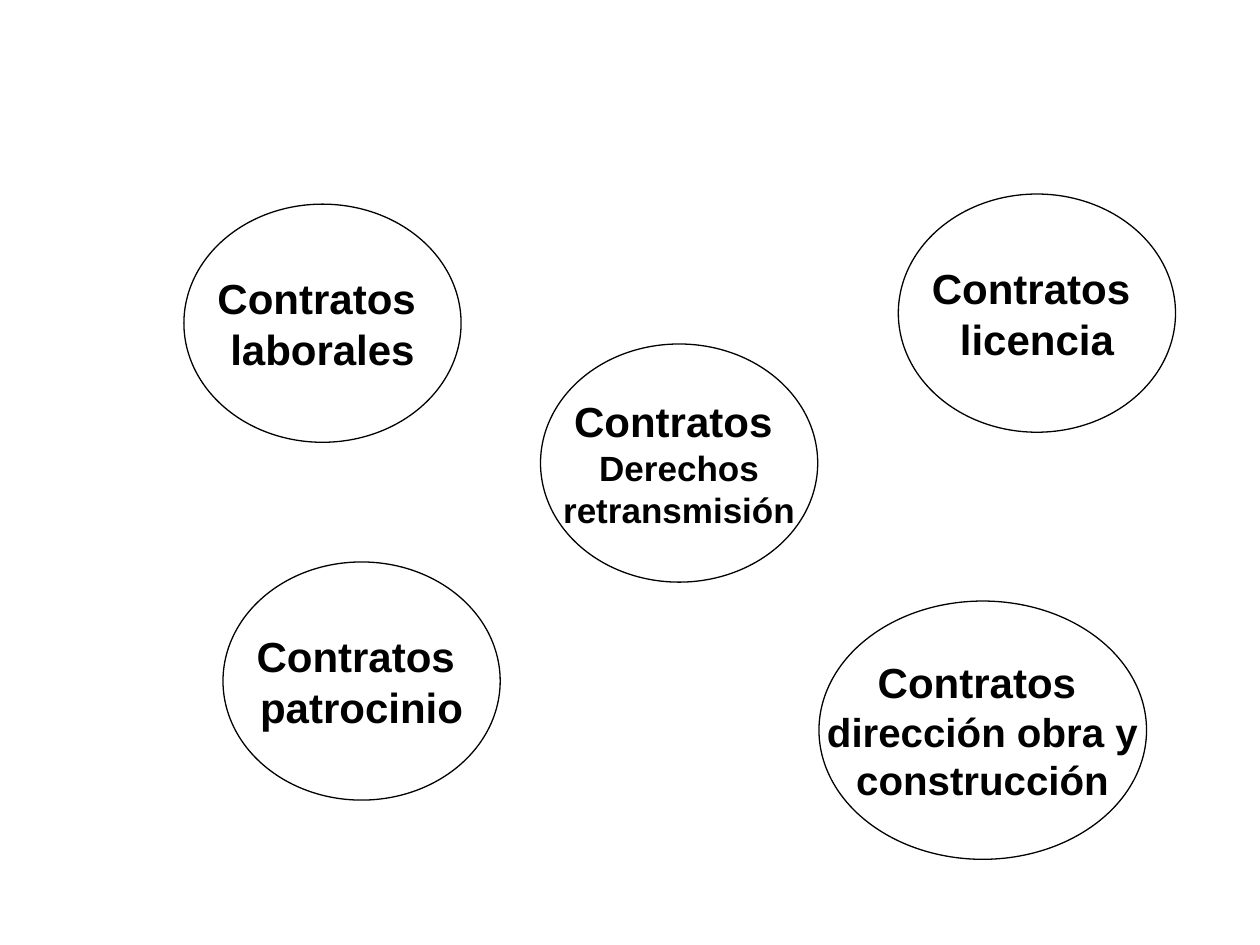
from pptx import Presentation
from pptx.dml.color import RGBColor
from pptx.enum.shapes import MSO_SHAPE
from pptx.enum.text import MSO_ANCHOR, PP_ALIGN
from pptx.util import Inches, Pt

W, H = 10, 7.5
OVAL = (2.2 / W, 1.89 / H)
WIDE_OVAL = (2.6 / W, 2.05 / H)
HEADING = "Contratos "
HEADING_SIZE = 24

# Left and top as shares of the slide, oval size, lines below the heading, their size
CONTRACTS = [
    (1.77 / W, 4.46 / H, OVAL, ["patrocinio"], 24),
    (1.46 / W, 1.62 / H, OVAL, ["laborales"], 24),
    (4.29 / W, 2.73 / H, OVAL, ["Derechos", "retransmisión"], 20),
    (7.13 / W, 1.54 / H, OVAL, ["licencia"], 24),
    (6.5 / W, 4.77 / H, WIDE_OVAL, ["dirección obra y", "construcción"], 23),
]


def color(value):
    return RGBColor.from_string(value)


def add_line(p, text, size):
    p.alignment = PP_ALIGN.CENTER
    r = p.add_run()
    r.text = text
    for name, value in {"name": "Arial", "size": Pt(size), "bold": True}.items():
        setattr(r.font, name, value)
    r.font.color.rgb = color("000000")


def add_contract(s, box, lines, size):
    """Place one outlined oval with a heading and its lines in the given box."""
    left, top, width, height = box
    sp = s.shapes.add_shape(MSO_SHAPE.OVAL, Inches(left * W), Inches(top * H),
                            Inches(width * W), Inches(height * H))
    sp.shadow.inherit = False
    sp.fill.background()
    sp.line.color.rgb = color("000000")
    sp.line.width = Pt(0.75)

    # Centred text, free to reach past the oval's inner frame
    tf = sp.text_frame
    for name, value in {"word_wrap": False, "vertical_anchor": MSO_ANCHOR.MIDDLE}.items():
        setattr(tf, name, value)
    add_line(tf.paragraphs[0], HEADING, HEADING_SIZE)
    for line in lines:
        add_line(tf.add_paragraph(), line, size)


def main():
    prs = Presentation()
    prs.slide_width, prs.slide_height = Inches(W), Inches(H)
    s = prs.slides.add_slide(prs.slide_layouts[6])
    s.background.fill.solid()
    s.background.fill.fore_color.rgb = color("FFFFFF")

    # Contract types
    for left, top, oval, lines, size in CONTRACTS:
        add_contract(s, (left, top, *oval), lines, size)

    prs.save("out.pptx")


if __name__ == "__main__":
    main()
